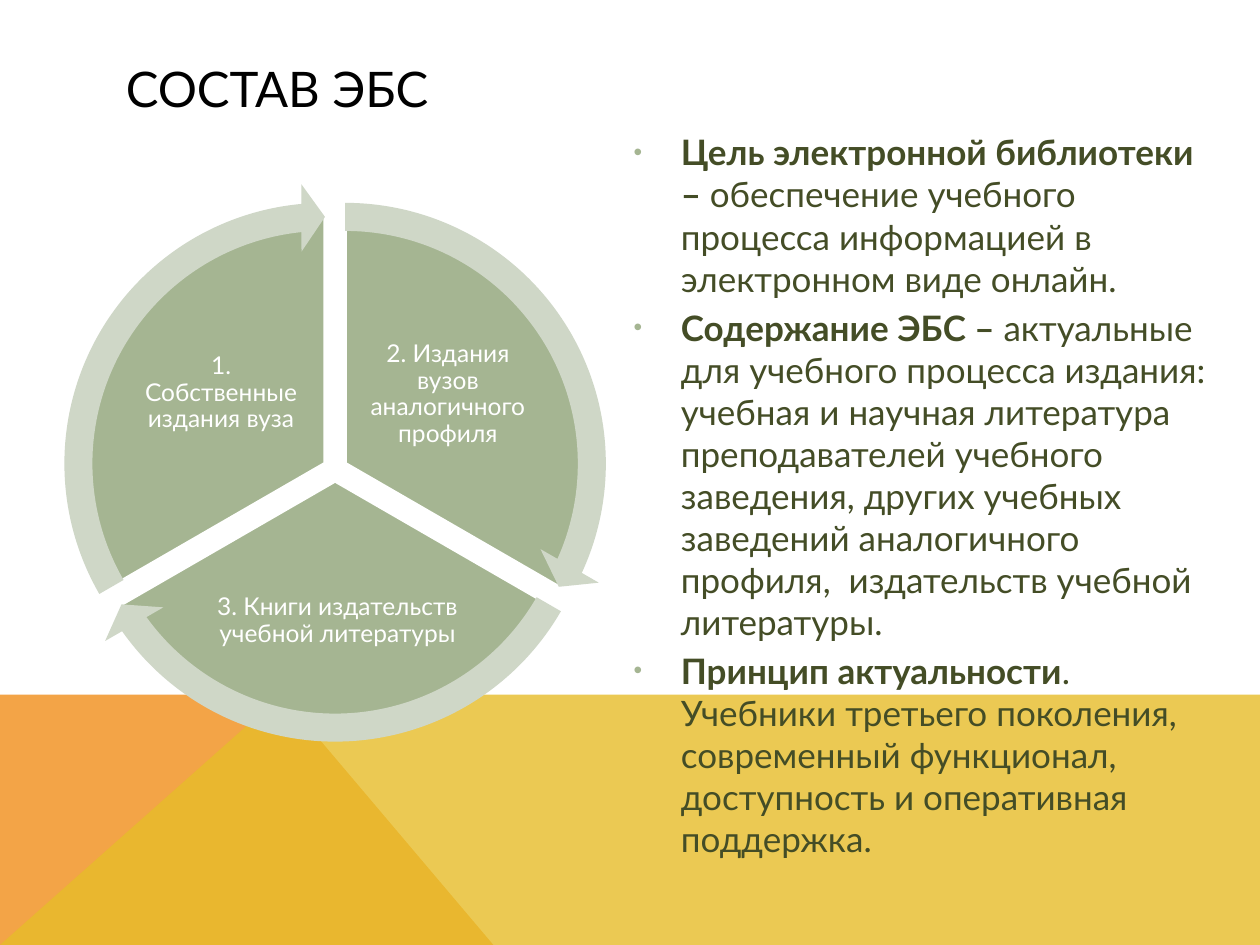
from dataclasses import dataclass
from math import cos, radians, sin

from lxml.etree import SubElement
from pptx import Presentation
from pptx.dml.color import RGBColor
from pptx.enum.shapes import MSO_SHAPE
from pptx.enum.text import MSO_ANCHOR, PP_ALIGN
from pptx.oxml.ns import qn
from pptx.util import Pt

FONT = "Lato"
SAGE, PALE_SAGE, OLIVE = "A5B592", "CFD7C7", "444D26"
WHITE, BLACK, ORANGE, GOLD = "FFFFFF", "000000", "F3A447", "E7BC29"

SLIDE_W, SLIDE_H = 720, 540
BAND_TOP, BAND_PEAK_X = 397.4, 160.6

CYCLE_X, CYCLE_Y = 191.5, 268.2
SECTOR_SHIFT = 6.6
PIE_SIZE, RING_SIZE = 285, 320.4
SWEEP, ARROW_SWEEP = 120, 114.5
DEGREE = 0.6  # one degree in adjustment units


@dataclass
class Sector:
    label: str
    start: float
    label_box: tuple[float, float, float, float]

    @property
    def centre(self) -> tuple[float, float]:
        middle = radians(self.start + SWEEP / 2)
        return (CYCLE_X + SECTOR_SHIFT * cos(middle),
                CYCLE_Y + SECTOR_SHIFT * sin(middle))


@dataclass
class Thesis:
    lead: str
    detail: str


SECTORS = [
    Sector("2. Издания вузов аналогичного профиля", 270, (205.2, 182.9, 101.5, 85)),
    Sector("3. Книги издательств учебной литературы", 30, (116.6, 317.5, 152.6, 74.9)),
    Sector("1. Собственные издания вуза", 150, (75.6, 182.2, 101.5, 85)),
]

THESES = [
    Thesis("Цель электронной библиотеки – ",
           "обеспечение учебного процесса информацией в электронном виде онлайн."),
    Thesis("Содержание ЭБС – ",
           "актуальные для учебного процесса издания: учебная и научная литература "
           "преподавателей учебного заведения, других учебных заведений "
           "аналогичного профиля,  издательств учебной литературы."),
    Thesis("Принцип актуальности",
           ". Учебники третьего поколения, современный функционал, "
           "доступность и оперативная поддержка."),
]


def set_fill(shape, colour: str) -> None:
    shape.fill.solid()
    shape.fill.fore_color.rgb = RGBColor.from_string(colour)


def add_band(slide, points: list[tuple[float, float]], colour: str):
    builder = slide.shapes.build_freeform(*points[0], scale=Pt(1))
    builder.add_line_segments(points[1:], close=True)
    band = builder.convert_to_shape()
    band.shadow.inherit = False
    set_fill(band, colour)
    band.line.fill.background()
    return band


def set_opacity(shape, percent: int) -> None:
    colour = shape.fill._xPr.find(qn("a:solidFill"))[0]
    SubElement(colour, qn("a:alpha"), val=str(percent * 1000))


def add_round(slide, preset: MSO_SHAPE, sector: Sector, size: float,
              colour: str, adjustments: list[float]):
    """Add a round preset shape centred on the sector's centre."""
    x, y = sector.centre
    shape = slide.shapes.add_shape(preset, Pt(x - size / 2), Pt(y - size / 2),
                                   Pt(size), Pt(size))
    for index, value in enumerate(adjustments):
        shape.adjustments[index] = value
    shape.shadow.inherit = False
    set_fill(shape, colour)
    return shape


def add_text_frame(slide, box: tuple[float, float, float, float], anchor: MSO_ANCHOR):
    frame = slide.shapes.add_textbox(*map(Pt, box)).text_frame
    frame.word_wrap = True
    frame.vertical_anchor = anchor
    return frame


def add_run(paragraph, text: str, size: float, colour: str, bold: bool = False) -> None:
    run = paragraph.add_run()
    run.text = text
    run.font.name = FONT
    run.font.size = Pt(size)
    run.font.bold = bold
    run.font.color.rgb = RGBColor.from_string(colour)


def add_bullet(paragraph, indent: float) -> None:
    properties = paragraph._p.get_or_add_pPr()
    properties.set("marL", str(Pt(indent)))
    properties.set("indent", str(-Pt(indent)))
    SubElement(SubElement(properties, qn("a:buClr")), qn("a:srgbClr"), val=SAGE)
    SubElement(properties, qn("a:buSzPct"), val="70000")
    SubElement(properties, qn("a:buFont"), typeface="Arial")
    SubElement(properties, qn("a:buChar"), char="•")


def add_sector(slide, sector: Sector) -> None:
    end = (sector.start + SWEEP) % 360
    pie = add_round(slide, MSO_SHAPE.PIE, sector, PIE_SIZE, SAGE,
                    [sector.start * DEGREE, end * DEGREE])
    pie.line.color.rgb = RGBColor.from_string(WHITE)
    pie.line.width = Pt(2)

    frame = add_text_frame(slide, sector.label_box, MSO_ANCHOR.MIDDLE)
    frame.margin_left = frame.margin_right = Pt(1.4)
    frame.margin_top = frame.margin_bottom = Pt(1.4)
    paragraph = frame.paragraphs[0]
    paragraph.alignment = PP_ALIGN.CENTER
    paragraph.line_spacing = 0.9
    paragraph.space_after = Pt(5)
    add_run(paragraph, sector.label, 14, WHITE)


def add_cycle_arrow(slide, sector: Sector) -> None:
    end = (sector.start + ARROW_SWEEP) % 360
    arrow = add_round(slide, MSO_SHAPE.CIRCULAR_ARROW, sector, RING_SIZE, PALE_SAGE,
                      [0.05, 3.28, end * DEGREE, sector.start * DEGREE, 0.06])
    arrow.line.fill.background()


def add_theses(slide) -> None:
    frame = add_text_frame(slide, (355, 71.3, 347.8, 385.2), MSO_ANCHOR.TOP)
    for index, thesis in enumerate(THESES):
        paragraph = frame.add_paragraph() if index else frame.paragraphs[0]
        paragraph.space_before = Pt(4)
        add_bullet(paragraph, 27)
        add_run(paragraph, thesis.lead, 20, OLIVE, bold=True)
        add_run(paragraph, thesis.detail, 20, OLIVE)


def main() -> None:
    presentation = Presentation()
    presentation.slide_width, presentation.slide_height = Pt(SLIDE_W), Pt(SLIDE_H)
    slide = presentation.slides.add_slide(presentation.slide_layouts[6])

    peak = (BAND_PEAK_X, BAND_TOP)
    add_band(slide, [(0, SLIDE_H), (0, BAND_TOP), peak, (281.5, SLIDE_H)], ORANGE)
    gold_band = add_band(slide, [(0, SLIDE_H), peak, (SLIDE_W, BAND_TOP),
                                 (SLIDE_W, SLIDE_H)], GOLD)
    set_opacity(gold_band, 80)

    title = add_text_frame(slide, (64.8, 28.8, 592.6, 43.2), MSO_ANCHOR.MIDDLE)
    add_run(title.paragraphs[0], "СОСТАВ ЭБС", 28, BLACK)

    for sector in SECTORS:
        add_sector(slide, sector)
    for sector in SECTORS:
        add_cycle_arrow(slide, sector)
    add_theses(slide)

    presentation.save("out.pptx")


if __name__ == "__main__":
    main()
